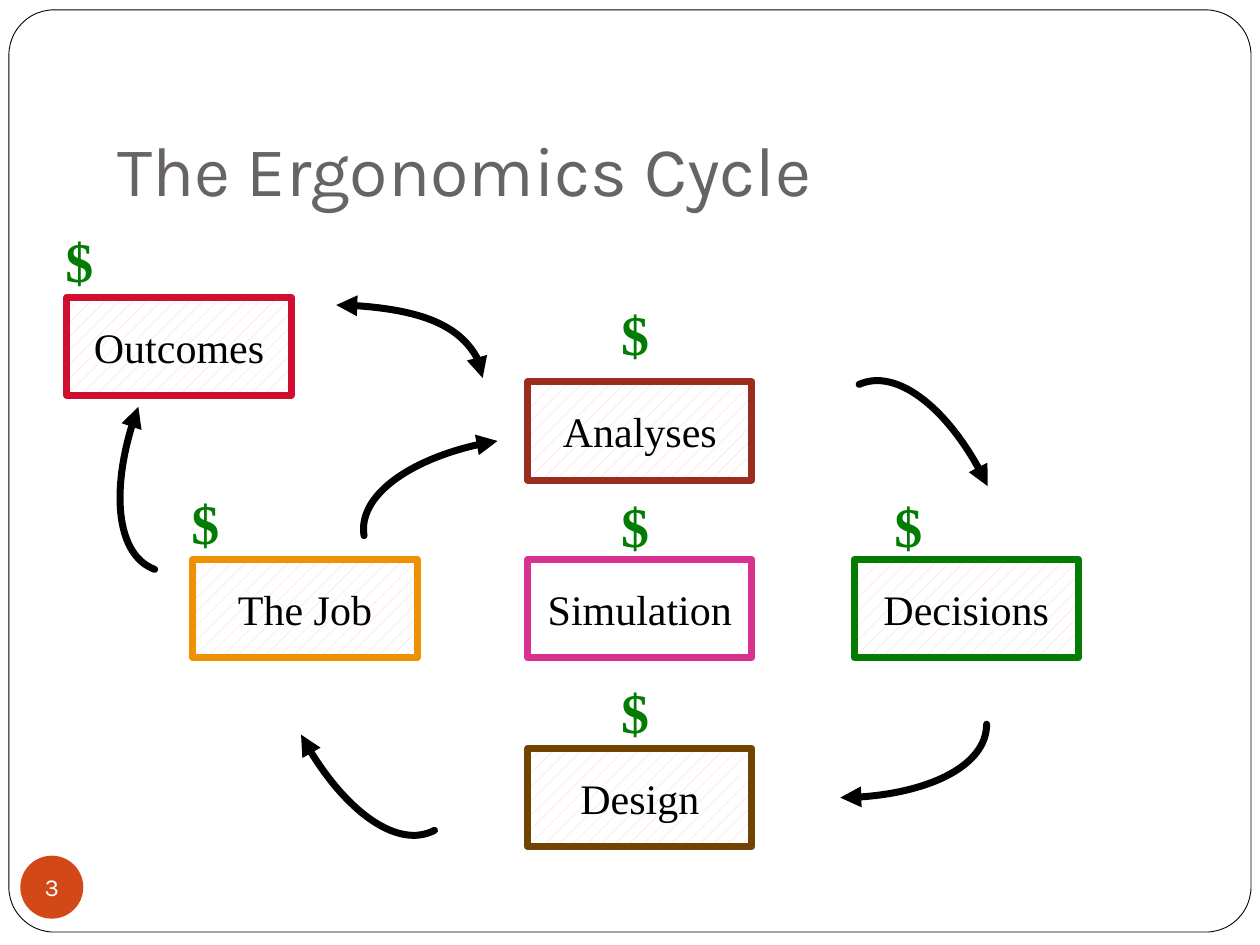
from lxml.etree import SubElement
from pptx import Presentation
from pptx.dml.color import RGBColor
from pptx.enum.dml import MSO_PATTERN
from pptx.enum.shapes import MSO_SHAPE
from pptx.enum.text import MSO_ANCHOR, PP_ALIGN
from pptx.oxml.ns import qn
from pptx.util import Cm, Pt

BLACK = RGBColor(0x00, 0x00, 0x00)
WHITE = RGBColor(0xFF, 0xFF, 0xFF)
GREY = RGBColor(0x69, 0x64, 0x64)
PINK = RGBColor(0xFF, 0xC5, 0xCF)
RUST = RGBColor(0xD3, 0x48, 0x17)
RED = RGBColor(0xCF, 0x0E, 0x30)
BRICK = RGBColor(0x9B, 0x2D, 0x1F)
GOLD = RGBColor(0xEF, 0x91, 0x00)
ROSE = RGBColor(0xD9, 0x31, 0x92)
GREEN = RGBColor(0x03, 0x7C, 0x03)
BROWN = RGBColor(0x71, 0x44, 0x00)

SERIF, SANS = "Times New Roman", "Karla"
WIDE, HIGH = 4.52, 1.98  # size of a step box
TOP, MID = 5.99, 11.28
LEFT, RIGHT, HUB = 3.89, 17.22, 10.64

# name, left, top, edge, hatched, offset of the dollar sign
STEPS = [
    ("The Job", LEFT, MID, GOLD, True, (-0.28, -1.55)),
    ("Analyses", HUB, 7.7, BRICK, True, (1.63, -1.78)),
    ("Decisions", RIGHT, MID, GREEN, True, (0.56, -1.5)),
    ("Design", HUB, 15.09, BROWN, True, (1.63, -1.55)),
    ("Simulation", HUB, MID, ROSE, False, (1.63, -1.5)),
    ("Outcomes", 1.35, TOP, RED, True, (-0.28, -1.54)),
]

# start, two control points, end; then whether both ends have heads
CURVES = [
    ([(6.78, 6.15), (8.41, 6.15), (9.73, 6.81), (9.73, 7.62)], True),
    ([(7.34, 10.8), (7.21, 10.01), (8.41, 9.14), (10.03, 8.89)], False),
    ([(3.12, 11.48), (2.36, 11.2), (2.21, 9.73), (2.79, 8.2)], False),
    ([(17.32, 7.75), (18.06, 7.42), (19.23, 8.33), (19.91, 9.8)], False),
    ([(8.76, 16.74), (8.03, 17.12), (6.83, 16.26), (6.07, 14.81)], False),
    ([(19.89, 14.6), (19.89, 15.42), (18.57, 16.08), (16.94, 16.08)], False),
]


def write(shape, text, color, align, frame, font):
    """Fill a shape with one line of text in the given format."""
    body = shape.text_frame
    for key, value in frame.items():
        setattr(body, key, value)
    line = body.paragraphs[0]
    line.alignment = align
    run = line.add_run()
    run.text = text
    for key, value in font.items():
        setattr(run.font, key, value)
    run.font.color.rgb = color


def plain(slide, kind, box):
    shape = slide.shapes.add_shape(kind, *map(Cm, box))
    shape.shadow.inherit = False
    return shape


def stroke(shape, color, width):
    shape.line.color.rgb = color
    shape.line.width = Pt(width)


def add_frame(slide, box):
    shape = plain(slide, MSO_SHAPE.ROUNDED_RECTANGLE, box)
    shape.adjustments[0] = 0.049
    shape.fill.solid()
    shape.fill.fore_color.rgb = WHITE
    stroke(shape, BLACK, 0.5)
    # Send behind the title
    slide.shapes._spTree.insert(2, shape._element)


def add_title(slide, box, text):
    title = slide.shapes.title
    for key, value in zip(("left", "top", "width", "height"), box):
        setattr(title, key, Cm(value))
    frame = {"vertical_anchor": MSO_ANCHOR.BOTTOM, "word_wrap": True,
             "margin_bottom": Cm(0.25)}
    write(title, text, GREY, PP_ALIGN.LEFT, frame,
          {"name": SANS, "size": Pt(40)})


def add_step(slide, box, name, edge, hatched):
    shape = plain(slide, MSO_SHAPE.RECTANGLE, box)
    if hatched:
        shape.fill.patterned()
        shape.fill.pattern = MSO_PATTERN.PERCENT_10
        shape.fill.fore_color.rgb = PINK
        shape.fill.back_color.rgb = WHITE
    else:
        shape.fill.background()
    stroke(shape, edge, 4)
    frame = {"vertical_anchor": MSO_ANCHOR.MIDDLE, "word_wrap": False}
    write(shape, name, BLACK, PP_ALIGN.CENTER, frame,
          {"name": SERIF, "size": Pt(24)})


def add_cost(slide, box):
    shape = slide.shapes.add_textbox(*map(Cm, box))
    write(shape, "$", GREEN, PP_ALIGN.LEFT, {"word_wrap": True},
          {"name": SERIF, "size": Pt(32), "bold": True})


def add_curve(slide, points, both):
    start, *rest = [(Cm(x), Cm(y)) for x, y in points]
    pen = slide.shapes.build_freeform(*start)
    pen.add_line_segments(rest, close=False)
    shape = pen.convert_to_shape()
    shape.shadow.inherit = False
    shape.fill.background()
    stroke(shape, BLACK, 4)
    # Join the three segments into one Bezier
    route = shape._element.find(".//" + qn("a:path"))
    bend = SubElement(route, qn("a:cubicBezTo"))
    for leg in route.findall(qn("a:lnTo")):
        bend.append(leg[0])
        route.remove(leg)
    # Round cap and arrowheads
    line = shape.line._get_or_add_ln()
    line.set("cap", "rnd")
    for end in ("a:headEnd", "a:tailEnd") if both else ("a:tailEnd",):
        SubElement(line, qn(end)).set("type", "triangle")


def add_badge(slide, box, text):
    shape = plain(slide, MSO_SHAPE.OVAL, box)
    shape.fill.solid()
    shape.fill.fore_color.rgb = RUST
    shape.line.fill.background()
    frame = {"vertical_anchor": MSO_ANCHOR.MIDDLE, "word_wrap": False}
    for side in ("left", "top", "right", "bottom"):
        frame["margin_" + side] = 0
    write(shape, text, WHITE, PP_ALIGN.CENTER, frame,
          {"name": SANS, "size": Pt(14)})


def main():
    deck = Presentation()
    deck.slide_width, deck.slide_height = Cm(25.4), Cm(19.05)
    slide = deck.slides.add_slide(deck.slide_layouts[5])

    # Page
    add_frame(slide, (0.18, 0.2, 25.04, 18.59))
    add_title(slide, (2.11, 1.27, 21.59, 3.23), "The Ergonomics Cycle")

    # Cycle
    for name, x, y, edge, hatched, _ in STEPS:
        add_step(slide, (x, y, WIDE, HIGH), name, edge, hatched)
    for points, both in CURVES:
        add_curve(slide, points, both)
    for _, x, y, _, _, (dx, dy) in STEPS:
        add_cost(slide, (x + dx, y + dy, 2.77, 1.6))

    # Page number
    add_badge(slide, (0.41, 17.25, 1.27, 1.27), "3")
    deck.save("out.pptx")


if __name__ == "__main__":
    main()
